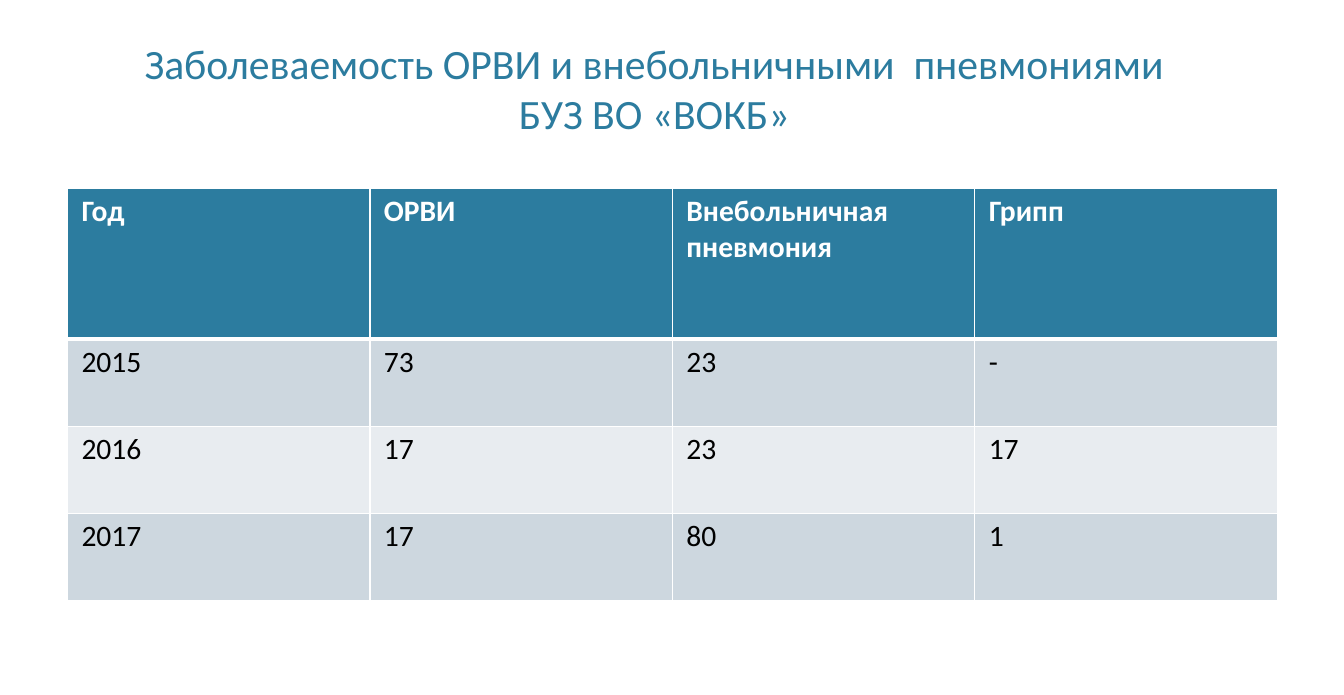
from typing import NamedTuple

from lxml.etree import SubElement
from pptx import Presentation
from pptx.dml.color import RGBColor
from pptx.enum.text import MSO_ANCHOR, PP_ALIGN
from pptx.oxml.ns import qn
from pptx.util import Inches, Pt

TEAL = RGBColor(0x2C, 0x7C, 0x9F)
WHITE = RGBColor(0xFF, 0xFF, 0xFF)
BLACK = RGBColor(0x00, 0x00, 0x00)
BAND_DARK = RGBColor(0xCD, 0xD7, 0xDF)
BAND_LIGHT = RGBColor(0xE8, 0xEC, 0xF0)
FONT = "Calibri"
THIN, THICK = Pt(1), Pt(3)


class RowStyle(NamedTuple):
    height: float
    fill: RGBColor
    color: RGBColor
    bold: bool
    top: int
    bottom: int


class YearRow(NamedTuple):
    year: str
    arvi: str
    pneumonia: str
    flu: str


HEADER = RowStyle(1.63, TEAL, WHITE, True, THIN, THICK)
FIRST_YEAR = RowStyle(0.94, BAND_DARK, BLACK, False, THICK, THIN)
EVEN_YEAR = RowStyle(0.94, BAND_LIGHT, BLACK, False, THIN, THIN)
ODD_YEAR = RowStyle(0.94, BAND_DARK, BLACK, False, THIN, THIN)

INCIDENCE = [
    (YearRow("Год", "ОРВИ", "Внебольничная пневмония", "Грипп"), HEADER),
    (YearRow("2015", "73", "23", "-"), FIRST_YEAR),
    (YearRow("2016", "17", "23", "17"), EVEN_YEAR),
    (YearRow("2017", "17", "80", "1"), ODD_YEAR),
]


def format_runs(paragraph, size: float, color: RGBColor, bold: bool = False) -> None:
    for run in paragraph.runs:
        run.font.name = FONT
        run.font.size = Pt(size)
        run.font.bold = bold
        run.font.color.rgb = color


def add_title(slide) -> None:
    title = slide.shapes.add_textbox(Inches(0.34), Inches(0.3), Inches(13.45), Inches(1.25))
    frame = title.text_frame
    frame.word_wrap = True
    frame.vertical_anchor = MSO_ANCHOR.BOTTOM
    frame.margin_left = frame.margin_right = Inches(0.13)
    frame.margin_top = frame.margin_bottom = Inches(0.06)
    heading = frame.paragraphs[0]
    heading.text = "Заболеваемость ОРВИ и внебольничными  пневмониями\vБУЗ ВО «ВОКБ»"
    heading.alignment = PP_ALIGN.CENTER
    format_runs(heading, 32.4, TEAL)


def set_borders(cell, style: RowStyle) -> None:
    properties = cell._tc.get_or_add_tcPr()
    widths = {"lnL": THIN, "lnR": THIN, "lnT": style.top, "lnB": style.bottom}
    for edge, width in widths.items():
        border = SubElement(properties, qn(f"a:{edge}"), w=str(width))
        border_fill = SubElement(border, qn("a:solidFill"))
        SubElement(border_fill, qn("a:srgbClr"), val=str(WHITE))


def fill_cell(cell, text: str, style: RowStyle) -> None:
    cell.text_frame.text = text
    cell.margin_left = cell.margin_right = Inches(0.15)
    cell.margin_top = cell.margin_bottom = Inches(0.05)
    set_borders(cell, style)
    cell.fill.solid()
    cell.fill.fore_color.rgb = style.fill
    format_runs(cell.text_frame.paragraphs[0], 23, style.color, style.bold)


def add_incidence_table(slide) -> None:
    height = sum(style.height for _, style in INCIDENCE)
    table = slide.shapes.add_table(
        len(INCIDENCE), len(YearRow._fields),
        Inches(0.73), Inches(2.03), Inches(13.06), Inches(height),
    ).table
    for row, (values, style) in zip(table.rows, INCIDENCE):
        row.height = Inches(style.height)
        for cell, text in zip(row.cells, values):
            fill_cell(cell, text, style)


def main() -> None:
    presentation = Presentation()
    presentation.slide_width = Inches(14.51)
    presentation.slide_height = Inches(7.5)
    slide = presentation.slides.add_slide(presentation.slide_layouts[6])
    add_title(slide)
    add_incidence_table(slide)
    presentation.save("out.pptx")


if __name__ == "__main__":
    main()
